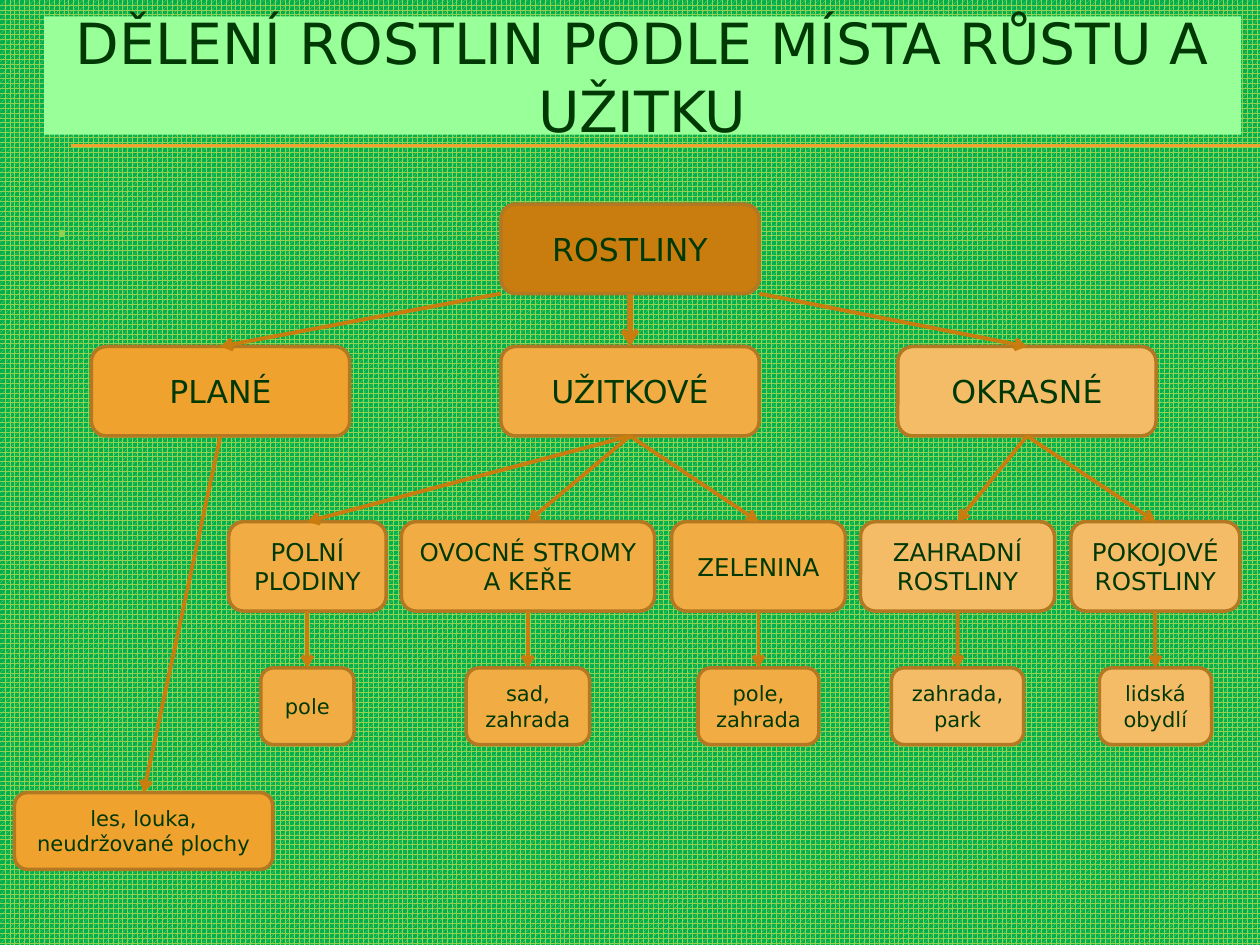
from lxml import etree
from pptx import Presentation
from pptx.dml.color import RGBColor
from pptx.enum.dml import MSO_PATTERN
from pptx.enum.shapes import MSO_CONNECTOR, MSO_SHAPE
from pptx.enum.text import MSO_ANCHOR, PP_ALIGN
from pptx.oxml.ns import qn
from pptx.util import Inches, Pt

SPHERE = MSO_PATTERN.SPHERE
STRAIGHT = MSO_CONNECTOR.STRAIGHT
RECT, ROUND = MSO_SHAPE.RECTANGLE, MSO_SHAPE.ROUNDED_RECTANGLE
MIDDLE, TOP = MSO_ANCHOR.MIDDLE, MSO_ANCHOR.TOP
CENTER, LEFT = PP_ALIGN.CENTER, PP_ALIGN.LEFT

FONT = "DejaVu Sans"
DARK, LIME, GOLD = "013904", "92D050", "F0A22E"
BROWN, EDGE = "C87D0E", "B27822"
AMBER, SAND = "F2AC44", "F5BC67"

# Rows of the tree: top, height, text size
ROOT, GROUP = (1.62, 0.71, 18), (2.75, 0.71, 18)
KIND, PLACE, WILD = (4.14, 0.71, 14), (5.3, 0.61, 12), (6.29, 0.61, 12)

# Each group: name, centre, fill, kinds (name, centre, width, place, place width)
GROUPS = [
    ("PLANÉ", 1.75, GOLD, []),
    ("UŽITKOVÉ", 5, AMBER, [
        ("POLNÍ PLODINY", 2.44, 1.25, "pole", 0.74),
        ("OVOCNÉ STROMY A KEŘE", 4.19, 2.01, "sad, zahrada", 0.98),
        ("ZELENINA", 6.02, 1.38, "pole, zahrada", 0.96),
    ]),
    ("OKRASNÉ", 8.15, SAND, [
        ("ZAHRADNÍ ROSTLINY", 7.6, 1.54, "zahrada, park", 1.05),
        ("POKOJOVÉ ROSTLINY", 9.17, 1.34, "lidská obydlí", 0.89),
    ]),
]
WIDE = 2.05


def color(code):
    return RGBColor.from_string(code)


def write(shape, text, size, code=DARK, align=CENTER, anchor=MIDDLE):
    frame = shape.text_frame
    para = frame.paragraphs[0]
    run = para.add_run()
    run.text = text
    para.alignment = align
    for name, value in {"word_wrap": True, "vertical_anchor": anchor}.items():
        setattr(frame, name, value)
    for name, value in {"name": FONT, "size": Pt(size)}.items():
        setattr(run.font, name, value)
    run.font.color.rgb = color(code)
    return para


def block(slide, kind, box, fill):
    shape = slide.shapes.add_shape(kind, *map(Inches, box))
    shape.shadow.inherit = False
    shape.fill.solid()
    shape.fill.fore_color.rgb = color(fill)
    shape.line.fill.background()
    return shape


def node(slide, text, mid, width, row, fill):
    top, height, size = row
    shape = block(slide, ROUND, (mid - width / 2, top, width, height), fill)
    shape.line.color.rgb = color(EDGE)
    shape.line.width = Pt(2)
    write(shape, text, size)
    return shape


def rule(slide, start, end, code, width):
    line = slide.shapes.add_connector(STRAIGHT, *start, *end)
    line.line.color.rgb = color(code)
    line.line.width = Pt(width)
    etree.SubElement(line._element.spPr, qn("a:effectLst"))
    return line


def arrow(slide, upper, lower, side=0.5, width=2.25):
    """Arrow from a point along the upper node's base to the lower node's top."""
    start = (upper.left + int(upper.width * side), upper.top + upper.height)
    end = (lower.left + lower.width // 2, lower.top)
    line = rule(slide, start, end, BROWN, width)
    if side == 0.5:
        line.begin_connect(upper, 2)
    line.end_connect(lower, 0)
    tail = etree.SubElement(line.line._get_or_add_ln(), qn("a:tailEnd"))
    tail.set("type", "arrow")


def header(slide, left, top, width, height):
    # Double gold rule that runs to the right edge
    for y in (1.15, 1.16):
        rule(slide, (Inches(0.56), Inches(y)), (Inches(10), Inches(y)), GOLD, 0.75)
    banner = block(slide, RECT, (left, top, width, height), "99FF99")
    write(banner, "DĚLENÍ ROSTLIN PODLE MÍSTA RŮSTU A UŽITKU", 32.4)


def body(slide, *box):
    area = slide.shapes.add_textbox(*map(Inches, box))
    para = write(area, ".", 32, LIME, LEFT, TOP)
    para.space_before = Pt(6.4)


def tree(slide):
    root = node(slide, "ROSTLINY", 5, WIDE, ROOT, BROWN)
    for (name, mid, fill, kinds), side in zip(GROUPS, (0, 0.5, 1)):
        group = node(slide, name, mid, WIDE, GROUP, fill)
        arrow(slide, root, group, side, 3 if side == 0.5 else 2.25)
        for kind, x, width, place, span in kinds:
            child = node(slide, kind, x, width, KIND, fill)
            leaf = node(slide, place, x, span, PLACE, fill)
            arrow(slide, group, child)
            arrow(slide, child, leaf)
        # Wild plants lead straight to their place
        if not kinds:
            leaf = node(slide, "les, louka, neudržované plochy", 1.14, WIDE, WILD, fill)
            arrow(slide, group, leaf)


def main():
    deck = Presentation()
    deck.slide_width, deck.slide_height = Inches(10), Inches(7.5)
    slide = deck.slides.add_slide(deck.slide_layouts[6])
    back = slide.background.fill
    back.patterned()
    back.pattern = SPHERE
    back.fore_color.rgb = color(LIME)
    back.back_color.rgb = color("00B050")
    header(slide, 0.35, 0.13, 9.5, 0.94)
    body(slide, 0.33, 1.39, 9.5, 5.91)
    tree(slide)
    deck.save("out.pptx")


if __name__ == "__main__":
    main()
